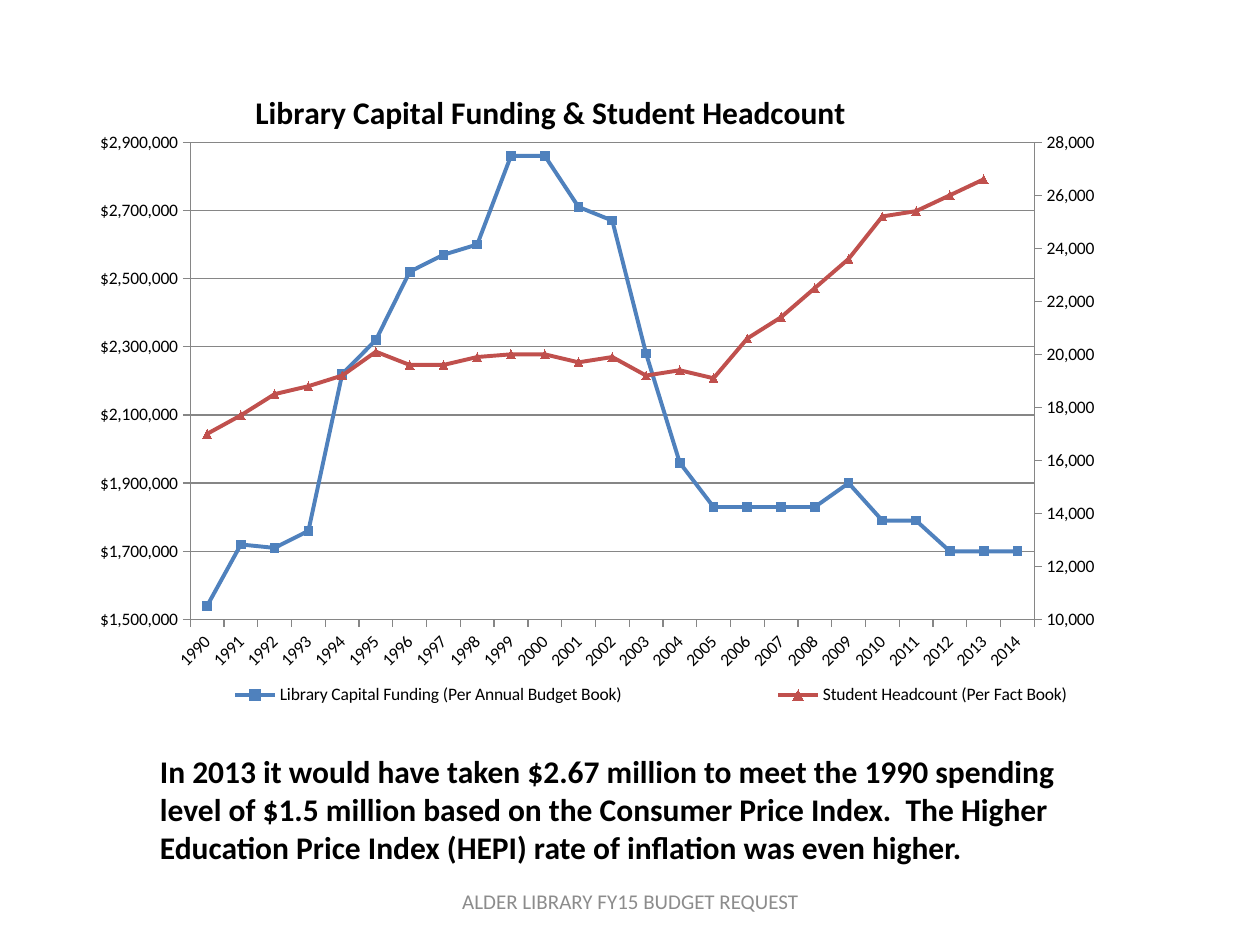
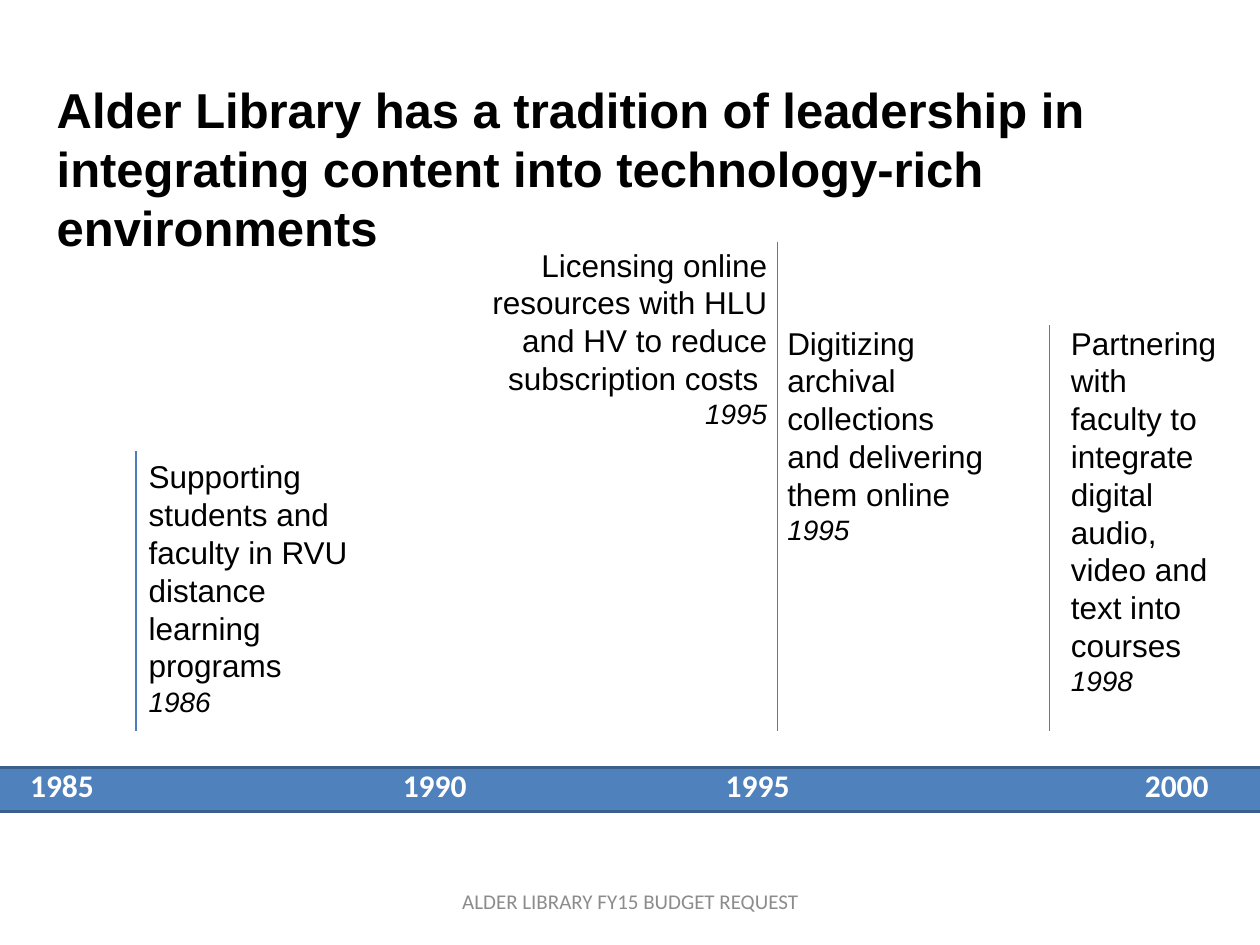
"""Build two library budget slides: a funding chart and a leadership timeline."""
import copy
from dataclasses import dataclass
from typing import Optional

import lxml.etree
import pptx
import pptx.chart.axis
import pptx.chart.data
import pptx.dml.color
import pptx.enum.chart
import pptx.enum.shapes
import pptx.enum.text
import pptx.oxml.ns
import pptx.util

Pt = pptx.util.Pt
RGBColor = pptx.dml.color.RGBColor
Align = pptx.enum.text.PP_ALIGN
Anchor = pptx.enum.text.MSO_ANCHOR
Marker = pptx.enum.chart.XL_MARKER_STYLE
qn = pptx.oxml.ns.qn

BLACK = RGBColor(0x00, 0x00, 0x00)
WHITE = RGBColor(0xFF, 0xFF, 0xFF)
FOOTER_GRAY = RGBColor(0x8C, 0x8C, 0x8C)
AXIS_GRAY = RGBColor(0x86, 0x86, 0x86)
BLUE = RGBColor(0x4F, 0x81, 0xBD)
BAND_EDGE = RGBColor(0x3A, 0x5F, 0x8C)
STEM_BLUE = RGBColor(0x4B, 0x7E, 0xBC)
RED = RGBColor(0xC0, 0x50, 0x4D)

HEADING_FONT = "Arial"
BODY_FONT = "Calibri"
FOOTER = "ALDER LIBRARY FY15 BUDGET REQUEST"
TITLE_ONLY_LAYOUT = 5
STEM_BOTTOM = 417.6

YEARS = [str(year) for year in range(1990, 2015)]
FUNDING = [thousands * 1000 for thousands in (
    1540, 1720, 1710, 1760, 2220, 2320, 2520, 2570, 2600, 2860, 2860, 2710, 2670,
    2280, 1960, 1830, 1830, 1830, 1830, 1900, 1790, 1790, 1700, 1700, 1700)]
HEADCOUNT = [
    17000, 17700, 18500, 18800, 19200, 20100, 19600, 19600, 19900, 20000, 20000, 19700,
    19900, 19200, 19400, 19100, 20600, 21400, 22500, 23600, 25200, 25400, 26000, 26600,
    None]


@dataclass(frozen=True)
class Frame:
    """Position and size in points."""
    left: float
    top: float
    width: float
    height: float

    def lengths(self) -> tuple:
        """Return the four lengths in the order python-pptx expects."""
        return Pt(self.left), Pt(self.top), Pt(self.width), Pt(self.height)


@dataclass(frozen=True)
class Milestone:
    """A timeline note with its year and, where it has one, its stem."""
    text: str
    year: str
    frame: Frame
    stem_left: Optional[float] = None
    stem_top: float = 0
    align: Align = Align.LEFT


@dataclass(frozen=True)
class SeriesStyle:
    """Name, values and look of one chart line."""
    name: str
    values: list
    color: RGBColor
    marker: Marker


CHART_FRAME = Frame(18, 41.8, 720, 372.2)
MILESTONES = [
    Milestone("Supporting students and faculty in RVU distance learning programs",
              "1986", Frame(77.8, 257.8, 143.3, 159.8), 77.8, 257.8),
    Milestone("Licensing online resources with HLU and HV to reduce subscription costs ",
              "1995", Frame(253.4, 136.8, 192.2, 113.8), 444.2, 138.2, Align.RIGHT),
    Milestone("Digitizing archival collections and delivering them online",
              "1995", Frame(442.8, 181.4, 127.4, 135.4)),
    Milestone("Partnering with faculty to integrate digital audio, video and text into courses",
              "1998", Frame(604.8, 181.4, 102.2, 223.2), 599.8, 185.8),
]
SERIES = [
    SeriesStyle("Library Capital Funding (Per Annual Budget Book)", FUNDING, BLUE,
                Marker.SQUARE),
    SeriesStyle("Student Headcount (Per Fact Book)", HEADCOUNT, RED, Marker.TRIANGLE),
]


def add_span(para, text: str, *, size: float, font: str = BODY_FONT,
             color: RGBColor = BLACK, bold: bool = False, italic: bool = False) -> None:
    """Append formatted text to a paragraph."""
    span = para.add_run()
    span.text = text
    span.font.size, span.font.name = Pt(size), font
    span.font.bold, span.font.italic = bold, italic
    span.font.color.rgb = color


def prepare(box, *, align: Align = Align.LEFT, anchor: Anchor = Anchor.TOP):
    """Set wrapping and alignment of a text shape and return its first paragraph."""
    text_frame = box.text_frame
    text_frame.word_wrap = True
    text_frame.auto_size = pptx.enum.text.MSO_AUTO_SIZE.NONE
    text_frame.vertical_anchor = anchor
    para = text_frame.paragraphs[0]
    para.alignment = align
    return para


def add_box(page, frame: Frame, **layout):
    """Add a text box and return its first paragraph."""
    return prepare(page.shapes.add_textbox(*frame.lengths()), **layout)


def add_page(deck, title: str, frame: Frame, *, size: float, font: str):
    """Add a slide with its title placeholder and the shared footer."""
    page = deck.slides.add_slide(deck.slide_layouts[TITLE_ONLY_LAYOUT])
    heading = page.shapes.title
    heading.left, heading.top, heading.width, heading.height = frame.lengths()
    add_span(prepare(heading), title, size=size, font=font, bold=True)
    footer = add_box(page, Frame(246.2, 500.4, 228.2, 28.8),
                     align=Align.CENTER, anchor=Anchor.MIDDLE)
    add_span(footer, FOOTER, size=12, color=FOOTER_GRAY)
    return page


def place_part(part, index: int, left: float, top: float, width: Optional[float] = None,
               height: Optional[float] = None) -> None:
    """Place a chart part, in points from the chart's top left corner."""
    for old in part.findall(qn("c:layout")):
        part.remove(old)
    layout = part.makeelement(qn("c:layout"), {})
    part.insert(index, layout)
    manual = lxml.etree.SubElement(layout, qn("c:manualLayout"))
    settings = {"layoutTarget": "inner"} if part.tag == qn("c:plotArea") else {}
    settings.update(xMode="edge", yMode="edge", x=left / CHART_FRAME.width,
                    y=top / CHART_FRAME.height)
    if width is not None and height is not None:
        settings.update(w=width / CHART_FRAME.width, h=height / CHART_FRAME.height)
    for name, value in settings.items():
        lxml.etree.SubElement(manual, qn(f"c:{name}")).set("val", str(value))


def set_value(element, name: str, value: str) -> None:
    """Set the value of a direct child of a chart element."""
    element.find(qn(f"c:{name}")).set("val", value)


def scale_axis(axis, low: float, high: float, unit: float, number_format: str) -> None:
    """Set the range, step and number format of a value axis."""
    axis.minimum_scale, axis.maximum_scale, axis.major_unit = low, high, unit
    axis.tick_labels.number_format = number_format
    axis.tick_labels.number_format_is_linked = False


def style_axis(axis) -> None:
    """Apply the shared axis line, ticks and label font."""
    axis.major_tick_mark = pptx.enum.chart.XL_TICK_MARK.OUTSIDE
    axis.minor_tick_mark = pptx.enum.chart.XL_TICK_MARK.NONE
    axis.format.line.color.rgb = AXIS_GRAY
    axis.format.line.width = Pt(0.75)
    font = axis.tick_labels.font
    font.size, font.name, font.color.rgb = Pt(10), BODY_FONT, BLACK


def move_to_right_axis(chart):
    """Plot the second series against a new right-hand axis and return that axis."""
    left_plot = chart.plots[0]._element
    left_values = chart.value_axis._element
    categories = chart.category_axis._element
    right_plot = copy.deepcopy(left_plot)
    right_values, hidden_categories = copy.deepcopy(left_values), copy.deepcopy(categories)
    left_plot.remove(left_plot.findall(qn("c:ser"))[1])
    right_plot.remove(right_plot.findall(qn("c:ser"))[0])
    left_plot.addnext(right_plot)
    left_values.addnext(right_values)
    right_values.addnext(hidden_categories)
    for reference, number in zip(right_plot.findall(qn("c:axId")), ("5001", "5002")):
        reference.set("val", number)
    for axis, own, crossed in ((hidden_categories, "5001", "5002"),
                               (right_values, "5002", "5001")):
        set_value(axis, "axId", own)
        set_value(axis, "crossAx", crossed)
    set_value(hidden_categories, "delete", "1")
    set_value(right_values, "axPos", "r")
    set_value(right_values, "crosses", "max")
    return pptx.chart.axis.ValueAxis(right_values)


def add_funding_chart(page) -> None:
    """Draw funding and headcount as lines on two value axes."""
    data = pptx.chart.data.CategoryChartData()
    data.categories = YEARS
    for style in SERIES:
        data.add_series(style.name, style.values)
    chart = page.shapes.add_chart(pptx.enum.chart.XL_CHART_TYPE.LINE_MARKERS,
                                  *CHART_FRAME.lengths(), data).chart
    chart.font.size, chart.font.name, chart.font.color.rgb = Pt(10), BODY_FONT, BLACK
    chart.plots[0].vary_by_categories = False
    for series, style in zip(chart.plots[0].series, SERIES):
        series.smooth = False
        series.format.line.color.rgb = style.color
        series.format.line.width = Pt(2.25)
        series.marker.style, series.marker.size = style.marker, 5
        for part in (series.marker.format.fill, series.marker.format.line.fill):
            part.solid()
            part.fore_color.rgb = style.color

    chart.has_title = True
    add_span(chart.chart_title.text_frame.paragraphs[0],
             "Library Capital Funding & Student Headcount", size=18, bold=True)
    place_part(chart.chart_title._element, 1, 124.7, 6.9)
    chart.has_legend = True
    chart.legend.position = pptx.enum.chart.XL_LEGEND_POSITION.BOTTOM
    chart.legend.include_in_layout = False
    place_part(chart.legend._element, 1, 30, 342.4, 648, 26)
    place_part(chart._chartSpace.chart.plotArea, 0, 90.7, 39.5, 482.4, 272.8)

    style_axis(chart.category_axis)
    label_body = chart.category_axis._element.find(qn("c:txPr")).find(qn("a:bodyPr"))
    label_body.set("rot", "-2700000")
    style_axis(chart.value_axis)
    scale_axis(chart.value_axis, 1500000, 2900000, 200000, '"$"#,##0')
    chart.value_axis.has_major_gridlines = True
    grid_line = chart.value_axis.major_gridlines.format.line
    grid_line.color.rgb, grid_line.width = AXIS_GRAY, Pt(0.75)
    right_axis = move_to_right_axis(chart)
    right_axis.has_major_gridlines = False
    scale_axis(right_axis, 10000, 28000, 2000, "#,##0")


def add_year_band(page) -> None:
    """Draw the blue band with its years at tab stops."""
    band = page.shapes.add_shape(pptx.enum.shapes.MSO_SHAPE.RECTANGLE,
                                 *Frame(-49.7, 438.5, 797.8, 25.2).lengths())
    band.shadow.inherit = False
    band.fill.solid()
    band.fill.fore_color.rgb = BLUE
    band.line.color.rgb, band.line.width = BAND_EDGE, Pt(2)
    para = add_box(page, Frame(10.1, 434.2, 702, 28.8))
    tabs = lxml.etree.SubElement(para._p.get_or_add_pPr(), qn("a:tabLst"))
    for position in (213, 397.5, 637):
        lxml.etree.SubElement(tabs, qn("a:tab"), pos=str(Pt(position)), algn="l")
    add_span(para, "1985\t1990\t1995\t2000", size=18, color=WHITE, bold=True)


def add_milestone(page, milestone: Milestone) -> None:
    """Draw one note and its stem."""
    para = add_box(page, milestone.frame, align=milestone.align)
    add_span(para, milestone.text, size=18, font=HEADING_FONT)
    para.add_line_break()
    add_span(para, milestone.year, size=16, font=HEADING_FONT, italic=True)
    if milestone.stem_left is not None:
        left = Pt(milestone.stem_left)
        stem = page.shapes.add_connector(pptx.enum.shapes.MSO_CONNECTOR.STRAIGHT, left,
                                         Pt(milestone.stem_top), left, Pt(STEM_BOTTOM))
        stem.line.color.rgb, stem.line.width = STEM_BLUE, Pt(0.75)
        lxml.etree.SubElement(stem._element.spPr, qn("a:effectLst"))


def main() -> None:
    """Build and save the deck."""
    deck = pptx.Presentation()
    deck.slide_width, deck.slide_height = Pt(720), Pt(540)
    funding_page = add_page(
        deck, "In 2013 it would have taken $2.67 million to meet the 1990 spending level of "
        "$1.5 million based on the Consumer Price Index.  The Higher Education Price Index "
        "(HEPI) rate of inflation was even higher.",
        Frame(84.2, 426.2, 527.8, 72.7), size=18, font=BODY_FONT)
    add_funding_chart(funding_page)
    timeline_page = add_page(
        deck, "Alder Library has a tradition of leadership in integrating content into "
        "technology-rich environments",
        Frame(25.2, 41.8, 666, 108.7), size=28, font=HEADING_FONT)
    add_year_band(timeline_page)
    for milestone in MILESTONES:
        add_milestone(timeline_page, milestone)
    deck.save("out.pptx")


if __name__ == "__main__":
    main()
